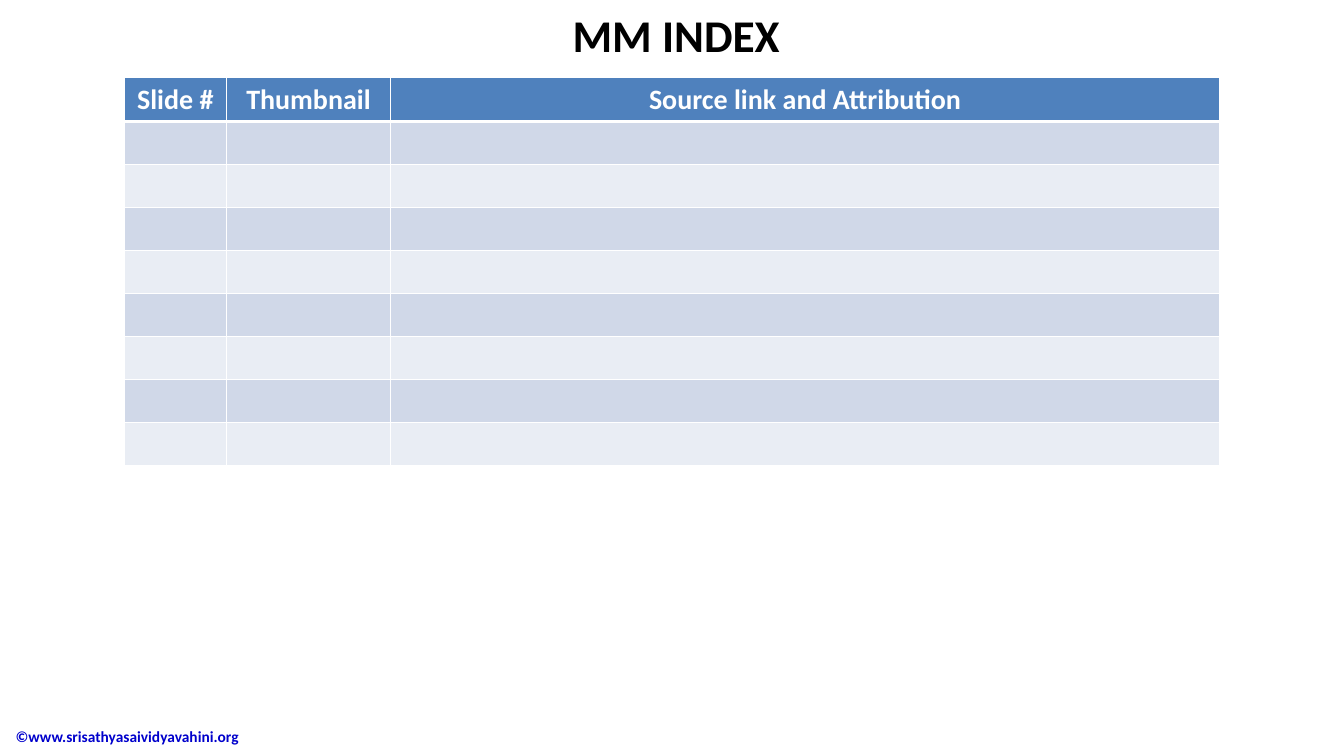
"""Build the MM INDEX slide with its table and footer."""
import dataclasses
import pptx
import pptx.dml.color
import pptx.enum.text
import pptx.oxml
import pptx.oxml.ns
import pptx.util

Pt = pptx.util.Pt
Align = pptx.enum.text.PP_ALIGN
Anchor = pptx.enum.text.MSO_ANCHOR


@dataclasses.dataclass(frozen=True)
class Theme:
    font: str = "Calibri"
    black: str = "000000"
    white: str = "FFFFFF"
    link: str = "0000CC"
    head: str = "4F81BD"
    bands: tuple = ("D0D8E8", "E9EDF4")
    title: float = 32.4
    label: float = 20
    small: float = 11


def color(code):
    return pptx.dml.color.RGBColor.from_string(code)


def write(frame, text, *, font, size, ink, align=Align.LEFT):
    para = frame.paragraphs[0]
    para.alignment = align
    run = para.add_run()
    run.text = text
    run.font.name = font
    run.font.size = Pt(size)
    run.font.bold = True
    run.font.color.rgb = color(ink)


def border(cell, side, width, ink):
    space = pptx.oxml.ns.nsdecls("a")
    line = pptx.oxml.parse_xml(
        f'<a:{side} {space} w="{Pt(width)}"><a:solidFill>'
        f'<a:srgbClr val="{ink}"/></a:solidFill></a:{side}>'
    )
    cell._tc.get_or_add_tcPr().append(line)


class Page:
    def __init__(self, deck, theme):
        self.theme = theme
        self.slide = deck.slides.add_slide(deck.slide_layouts[5])

    def title(self, text, left, top, width, height):
        box = self.slide.shapes.title
        box.left, box.top, box.width, box.height = map(Pt, (left, top, width, height))
        frame = box.text_frame
        frame.auto_size = pptx.enum.text.MSO_AUTO_SIZE.NONE
        frame.vertical_anchor = Anchor.TOP
        frame.margin_top = Pt(5)
        frame.margin_bottom = 0
        write(frame, text, font=self.theme.font, size=self.theme.title,
              ink=self.theme.black, align=Align.CENTER)

    def table(self, heads, left, top, widths, height, count):
        theme = self.theme
        shape = self.slide.shapes.add_table(
            count, len(heads), Pt(left), Pt(top), Pt(sum(widths)), Pt(height * count))
        table = shape.table
        for col, width in zip(table.columns, widths):
            col.width = Pt(width)
        for index, row in enumerate(table.rows):
            row.height = Pt(height)
            for cell in row.cells:
                for side in ("lnL", "lnR", "lnT", "lnB"):
                    thick = (index, side) in ((0, "lnB"), (1, "lnT"))
                    border(cell, side, 3 if thick else 1, theme.white)
                cell.fill.solid()
                cell.fill.fore_color.rgb = color(
                    theme.bands[(index - 1) % 2] if index else theme.head)
        for cell, text in zip(table.rows[0].cells, heads):
            write(cell.text_frame, text, font=theme.font, size=theme.label,
                  ink=theme.white, align=Align.CENTER)

    def label(self, text, left, top, width, height):
        box = self.slide.shapes.add_textbox(*map(Pt, (left, top, width, height)))
        frame = box.text_frame
        frame.word_wrap = True
        frame.vertical_anchor = Anchor.MIDDLE
        write(frame, text, font=self.theme.font, size=self.theme.small,
              ink=self.theme.link)


def main():
    deck = pptx.Presentation()
    deck.slide_width, deck.slide_height = Pt(960), Pt(540)
    page = Page(deck, Theme())
    page.label("©www.srisathyasaividyavahini.org", 4, 511.2, 254, 29)
    page.title("MM INDEX", 75, 0, 816, 40)
    page.table(("Slide #", "Thumbnail", "Source link and Attribution"),
               88.8, 55.5, (73, 117.2, 592.2), 30.7, 9)
    deck.save("out.pptx")


if __name__ == "__main__":
    main()
